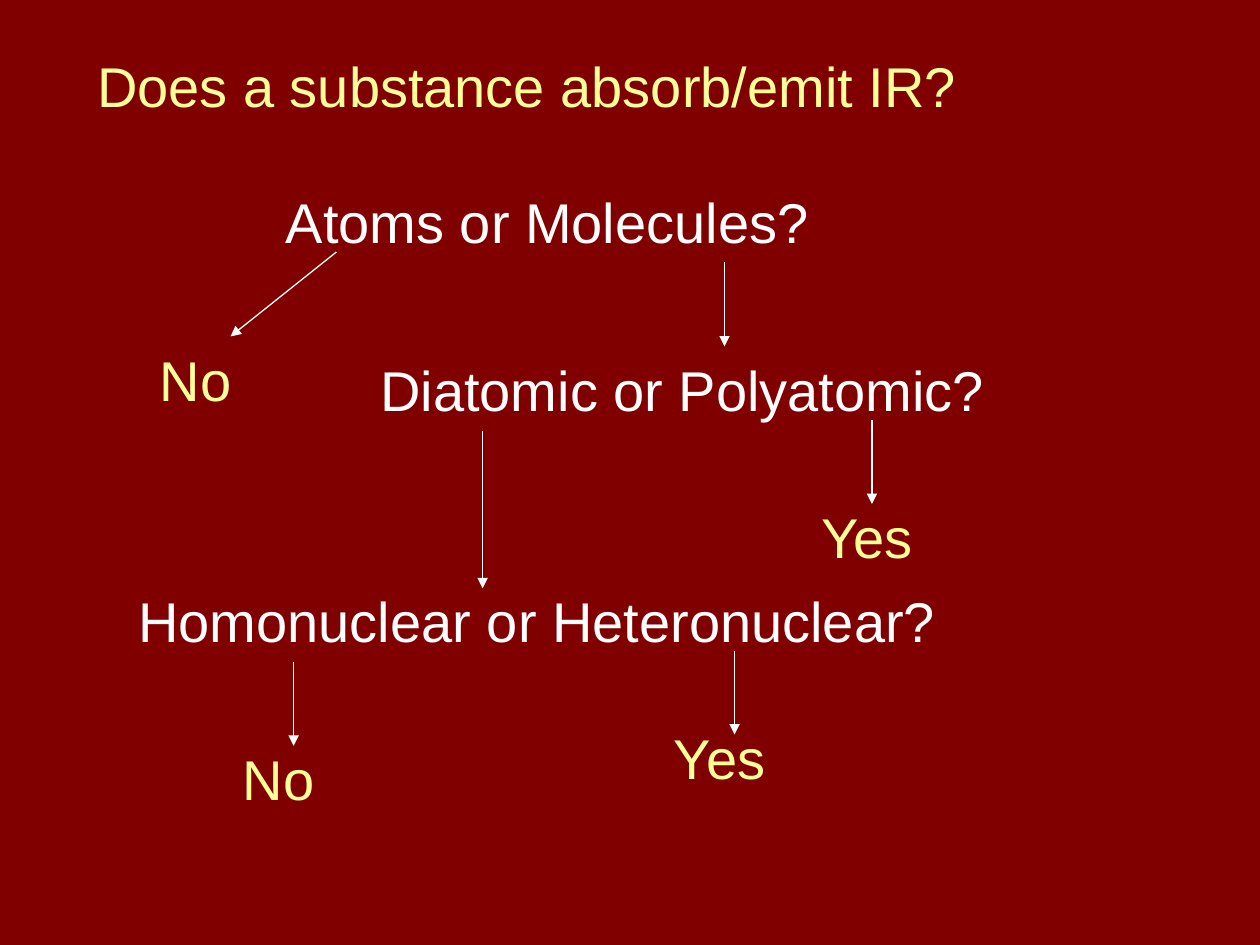
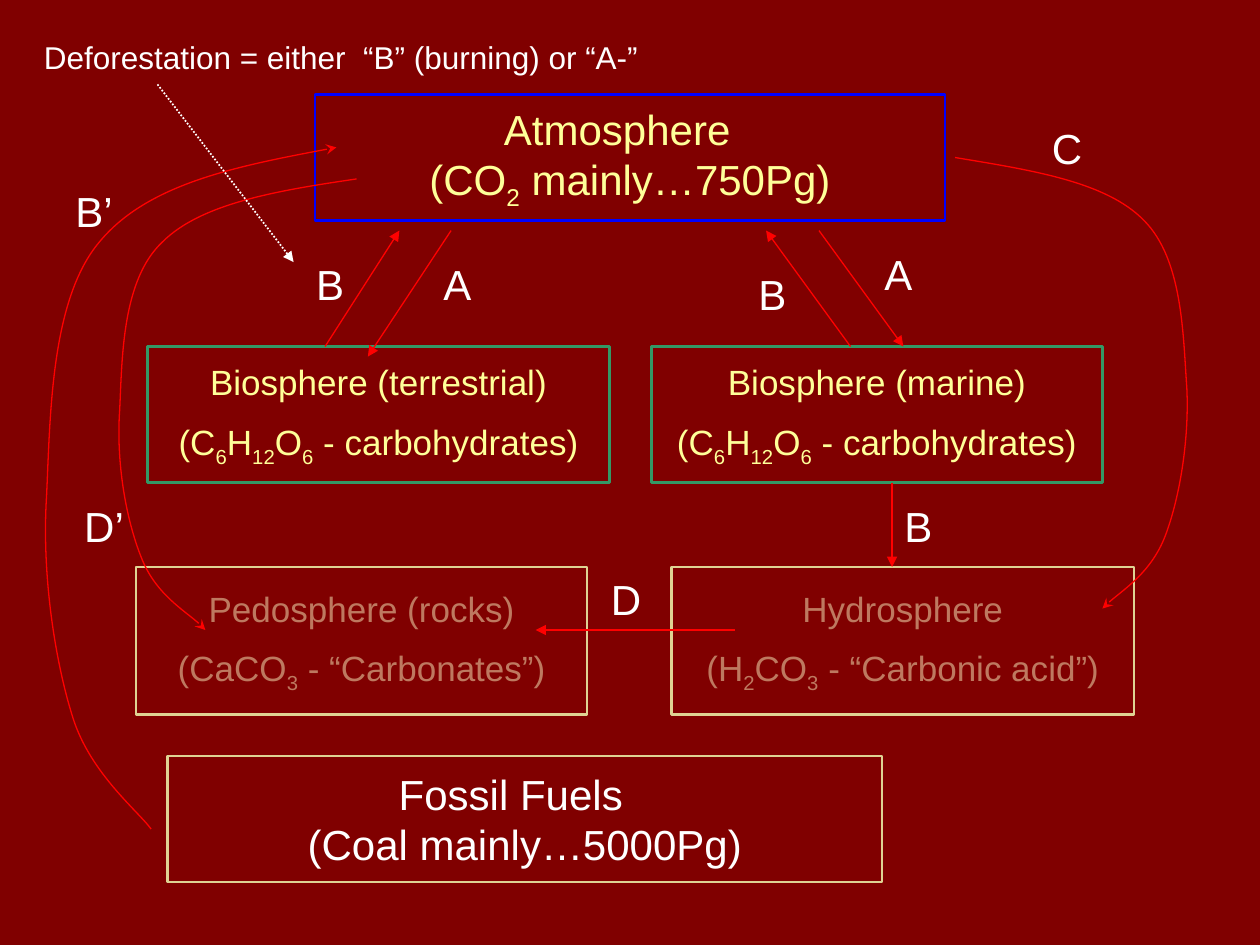
"""Build two slides: an IR absorption decision tree and a carbon cycle diagram."""
from lxml import etree
from pptx import Presentation
from pptx.dml.color import RGBColor
from pptx.enum.dml import MSO_LINE
from pptx.enum.shapes import MSO_CONNECTOR, MSO_SHAPE
from pptx.enum.text import MSO_ANCHOR, MSO_AUTO_SIZE, PP_ALIGN
from pptx.oxml.ns import qn
from pptx.util import Inches, Pt

MAROON = RGBColor(0x80, 0x00, 0x00)
YELLOW = RGBColor(0xFF, 0xFF, 0x99)
WHITE = RGBColor(0xFF, 0xFF, 0xFF)
RED = RGBColor(0xFF, 0x00, 0x00)
BLUE = RGBColor(0x00, 0x00, 0xFF)
GREEN = RGBColor(0x33, 0x99, 0x66)
SAND = RGBColor(0xDF, 0xD2, 0x93)
CLAY = RGBColor(0xBE, 0x79, 0x60)
FONT = "Arial"


def write(p, text, size, color):
    """Add runs to a paragraph; parts between underscores are subscripts."""
    for i, part in enumerate(text.split("_")):
        r = p.add_run()
        r.text = part
        r.font.name, r.font.size = FONT, Pt(size)
        r.font.color.rgb = color
        if i % 2:
            r._r.get_or_add_rPr().set("baseline", "-25000")


def style_arrow(sp, color, width=0.75, end="tailEnd", head="triangle"):
    """Colour a line, give it an arrowhead and remove its shadow."""
    sp.line.color.rgb = color
    sp.line.width = Pt(width)
    etree.SubElement(sp.line._get_or_add_ln(), qn("a:" + end), type=head)
    etree.SubElement(sp._element.spPr, qn("a:effectLst"))


prs = Presentation()
prs.slide_width, prs.slide_height = Inches(10), Inches(7.5)
fill = prs.slide_master.background.fill
fill.solid()
fill.fore_color.rgb = MAROON

# Decision tree
s = prs.slides.add_slide(prs.slide_layouts[5])
title = s.shapes.title
title.left, title.top, title.width, title.height = map(Inches, (0.67, 0.42, 7.08, 0.58))
tf = title.text_frame
tf.auto_size = MSO_AUTO_SIZE.NONE
tf.vertical_anchor = MSO_ANCHOR.TOP
p = tf.paragraphs[0]
p.alignment = PP_ALIGN.LEFT
p.line_spacing = 0.9
write(p, "Does a substance absorb/emit IR?", 32, YELLOW)

tree_nodes = [
    ("Atoms or Molecules?", 2.17, 1.5, 4.67, 0.58, WHITE),
    ("No", 1.17, 2.75, 1, 0.58, YELLOW),
    ("Diatomic or Polyatomic?", 2.92, 2.83, 5.5, 0.75, WHITE),
    ("Yes", 6.42, 4, 1, 0.58, YELLOW),
    ("Homonuclear or Heteronuclear?", 1, 4.67, 7, 0.67, WHITE),
    ("No", 1.83, 5.92, 1, 0.58, YELLOW),
    ("Yes", 5.25, 5.75, 1, 0.58, YELLOW),
]
for text, x, y, w, h, color in tree_nodes:
    tf = s.shapes.add_textbox(Inches(x), Inches(y), Inches(w), Inches(h)).text_frame
    tf.word_wrap = True
    p = tf.paragraphs[0]
    p.line_spacing = 0.9
    write(p, text, 32, color)

tree_arrows = [
    (2.67, 2, 1.83, 2.67),
    (5.75, 2.08, 5.75, 2.75),
    (3.83, 3.42, 3.83, 4.67),
    (6.92, 3.33, 6.92, 4),
    (2.33, 5.25, 2.33, 5.92),
    (5.83, 5.17, 5.83, 5.83),
]
for ends in tree_arrows:
    style_arrow(s.shapes.add_connector(MSO_CONNECTOR.STRAIGHT, *map(Inches, ends)), WHITE)

# Carbon cycle
s = prs.slides.add_slide(prs.slide_layouts[6])
sugar = "(C_6_H_12_O_6_ - carbohydrates)"
reservoirs = [
    ("Atmosphere", "(CO_2_ mainly…750Pg)", 2.5, 0.75, 5, 1, BLUE, YELLOW, 24),
    ("Biosphere (marine)", sugar, 5.17, 2.75, 3.58, 1.08, GREEN, YELLOW, 20),
    ("Biosphere (terrestrial)", sugar, 1.17, 2.75, 3.67, 1.08, GREEN, YELLOW, 20),
    ("Hydrosphere", "(H_2_CO_3_ - “Carbonic acid”)", 5.33, 4.5, 3.67, 1.17, SAND, CLAY, 20),
    ("Pedosphere (rocks)", "(CaCO_3_ - “Carbonates”)", 1.08, 4.5, 3.58, 1.17, SAND, CLAY, 20),
    ("Fossil Fuels", "(Coal mainly…5000Pg)", 1.33, 6, 5.67, 1, SAND, WHITE, 24),
]
for name, content, x, y, w, h, border, color, size in reservoirs:
    sp = s.shapes.add_shape(MSO_SHAPE.RECTANGLE, Inches(x), Inches(y), Inches(w), Inches(h))
    sp.shadow.inherit = False
    sp.fill.background()
    sp.line.color.rgb = border
    sp.line.width = Pt(1.5)
    tf = sp.text_frame
    tf.vertical_anchor = MSO_ANCHOR.MIDDLE
    p = tf.paragraphs[0]
    p.alignment = PP_ALIGN.CENTER
    if size == 24:
        write(p, name + "\t", size, color)
        p.add_line_break()
    else:
        write(p, name, size, color)
        p = tf.add_paragraph()
        p.alignment = PP_ALIGN.CENTER
        p.space_before = Pt(size / 2)
    write(p, content, size, color)

flows = [
    (2.58, 2.75, 3.17, 1.83),
    (3.58, 1.83, 2.92, 2.83),
    (6.75, 2.75, 6.08, 1.83),
    (6.5, 1.83, 7.17, 2.75),
    (7.08, 3.83, 7.08, 4.5),
    (5.83, 5, 4.25, 5),
]
for ends in flows:
    style_arrow(s.shapes.add_connector(MSO_CONNECTOR.STRAIGHT, *map(Inches, ends)), RED)

curved_flows = [
    ("tailEnd", [(7.58, 1.25), (8.18, 1.35), (8.78, 1.44), (9.08, 1.75),
                 (9.39, 2.06), (9.39, 2.67), (9.42, 3.08), (9.44, 3.5),
                 (9.36, 3.96), (9.25, 4.25), (9.14, 4.54), (8.83, 4.74), (8.75, 4.83)]),
    ("tailEnd", [(2.83, 1.42), (2.22, 1.51), (1.6, 1.61), (1.29, 1.92),
                 (0.97, 2.22), (0.97, 2.83), (0.95, 3.25), (0.92, 3.67),
                 (1, 4.12), (1.12, 4.42), (1.23, 4.71), (1.55, 4.9), (1.63, 5)]),
    ("headEnd", [(2.67, 1.17), (1.92, 1.31), (1.17, 1.46), (0.79, 1.92),
                 (0.4, 2.38), (0.4, 3.31), (0.37, 3.94), (0.33, 4.57),
                 (0.44, 5.26), (0.58, 5.7), (0.72, 6.14), (1.1, 6.44), (1.2, 6.58)]),
]
for end, points in curved_flows:
    start, *controls = [(Inches(x), Inches(y)) for x, y in points]
    builder = s.shapes.build_freeform(*start)
    builder.add_line_segments(controls, close=False)
    sp = builder.convert_to_shape()
    sp.fill.background()
    segments = list(sp._element.iter(qn("a:lnTo")))
    outline = segments[0].getparent()
    for i in range(0, len(segments), 3):
        curve = etree.SubElement(outline, qn("a:cubicBezTo"))
        for segment in segments[i:i + 3]:
            curve.append(segment[0])
            outline.remove(segment)
    style_arrow(sp, RED, end=end, head="stealth")

labels = [
    ("A", 3.42, 2, 0.42),
    ("A", 6.92, 1.92, 0.42),
    ("B’", 0.5, 1.42, 0.5),
    ("B", 2.41, 2, 0.42),
    ("B", 5.92, 2.08, 0.42),
    ("B", 7.08, 3.92, 0.42),
    ("C", 8.25, 0.92, 0.44),
    ("D", 4.75, 4.5, 0.44),
    ("D’", 0.57, 3.92, 0.52),
    ("Deforestation = either  “B” (burning) or “A-”", 0.25, 0.25, 4.97),
]
for text, x, y, w in labels:
    size, h = (24, 0.5) if len(text) < 3 else (18, 0.4)
    tf = s.shapes.add_textbox(Inches(x), Inches(y), Inches(w), Inches(h)).text_frame
    tf.word_wrap = False
    tf.auto_size = MSO_AUTO_SIZE.SHAPE_TO_FIT_TEXT
    write(tf.paragraphs[0], text, size, WHITE)

pointer = s.shapes.add_connector(MSO_CONNECTOR.STRAIGHT, *map(Inches, (1.25, 0.67, 2.33, 2.08)))
pointer.line.dash_style = MSO_LINE.ROUND_DOT
style_arrow(pointer, WHITE, width=1)

prs.save("out.pptx")
